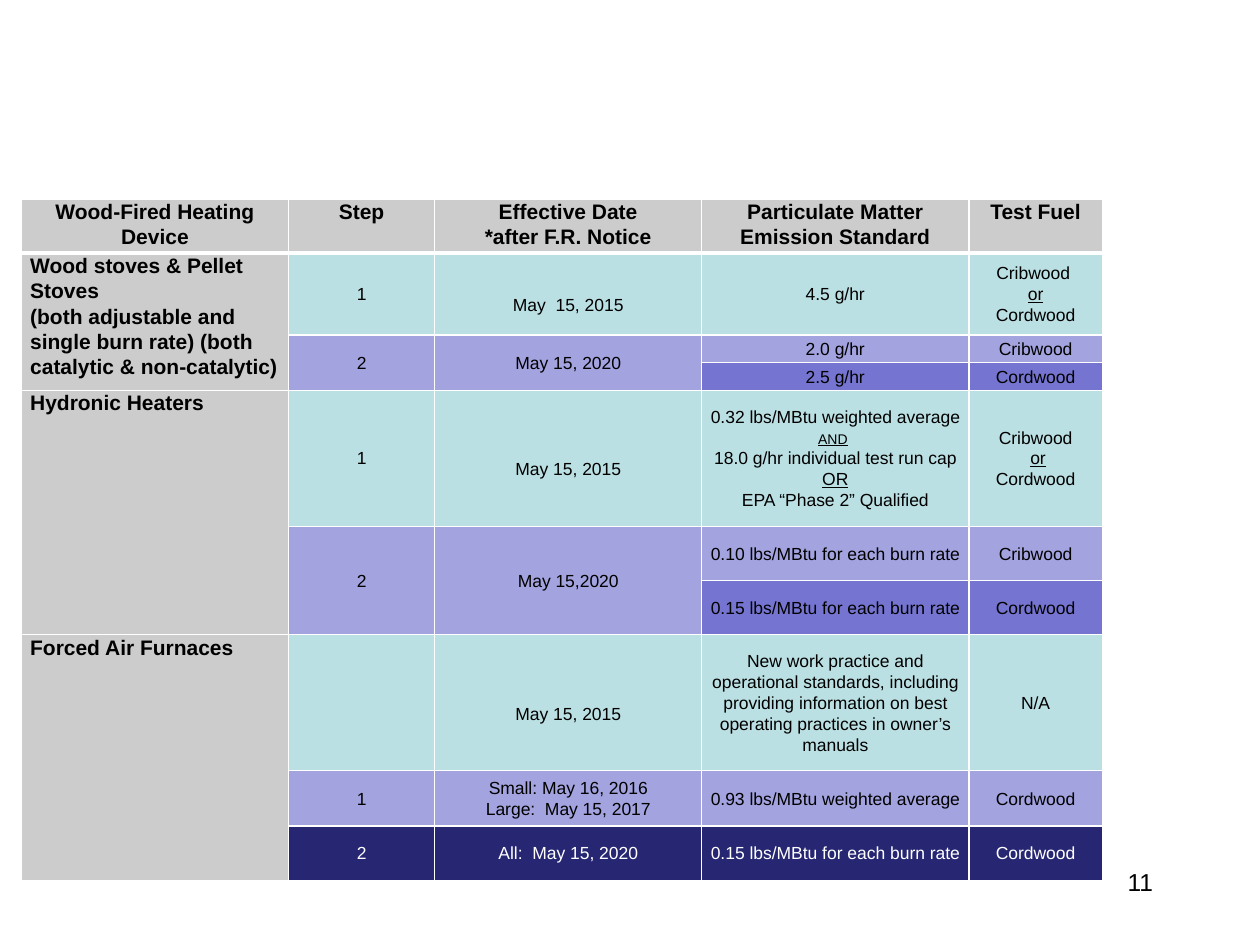
"""Build a slide with a table of wood heater emission standards."""
from lxml import etree
from pptx import Presentation
from pptx.dml.color import RGBColor
from pptx.enum import text
from pptx.oxml import ns
from pptx.util import Inches, Pt

BLACK = RGBColor(0, 0, 0)
WHITE = RGBColor(0xFF, 0xFF, 0xFF)
GRAY = RGBColor(0xCC, 0xCC, 0xCC)
TEAL = RGBColor(0xBB, 0xE0, 0xE3)
LILAC = RGBColor(0xA3, 0xA3, 0xE0)
VIOLET = RGBColor(0x75, 0x75, 0xD1)
NAVY = RGBColor(0x26, 0x26, 0x73)

COLUMN_WIDTHS = [2.12, 1.16, 2.12, 2.12, 1.06]
ROW_HEIGHTS = [0.4, 0.65, 0.22, 0.22, 1.08, 0.43, 0.43, 1.08, 0.44, 0.43]
STEP_FILLS = [TEAL, LILAC, VIOLET, TEAL, LILAC, VIOLET, TEAL, LILAC, NAVY]
DATE_COLUMN = 2
MERGES = [(1, 0, 3), (2, 1, 2), (2, 2, 2), (4, 0, 3),
          (5, 1, 2), (5, 2, 2), (7, 0, 3)]

UNDERLINED = {"underline": True}
OR_LINE = [("or", UNDERLINED)]
HEADINGS = [
    ["Wood-Fired Heating Device"],
    ["Step"],
    ["Effective Date", "*after F.R. Notice"],
    ["Particulate Matter Emission Standard"],
    ["Test Fuel"],
]
STANDARDS = [
    [["Wood stoves & Pellet Stoves",
      "(both adjustable and single burn rate) (both catalytic & non-catalytic)"],
     ["1"], ["May  15, 2015"], ["4.5 g/hr"],
     ["Cribwood ", OR_LINE, "Cordwood"]],
    [[], ["2"], ["May 15, 2020"], ["2.0 g/hr"], ["Cribwood"]],
    [[], [], [], ["2.5 g/hr"], ["Cordwood"]],
    [["Hydronic Heaters"], ["1"], ["May 15, 2015"],
     [[("0.32 lbs/MBtu weighted average ", {}),
       ("AND", {"underline": True, "size": 8}), (" ", {})],
      "18.0 g/hr individual test run cap",
      [("OR", UNDERLINED)],
      "EPA “Phase 2” Qualified"],
     ["Cribwood", [(" ", {})] + OR_LINE, "Cordwood"]],
    [[], ["2"], ["May 15,2020"], ["0.10 lbs/MBtu for each burn rate"],
     ["Cribwood"]],
    [[], [], [], ["0.15 lbs/MBtu for each burn rate"], ["Cordwood"]],
    [["Forced Air Furnaces"], [], ["May 15, 2015"],
     ["New work practice and operational standards, including providing "
      "information on best operating practices in owner’s manuals"], ["N/A"]],
    [[], ["1"], ["Small: May 16, 2016", "Large:  May 15, 2017"],
     ["0.93 lbs/MBtu weighted average"], ["Cordwood"]],
    [[], ["2"], ["All:  May 15, 2020"],
     ["0.15 lbs/MBtu for each burn rate"], ["Cordwood"]],
]


def write_text(frame, lines, size=10, bold=False, color=BLACK,
               align=text.PP_ALIGN.CENTER, spacing=1.07):
    """Fill a text frame with lines, each a string or a list of formatted runs."""
    for index, line in enumerate(lines):
        paragraph = frame.paragraphs[0] if index == 0 else frame.add_paragraph()
        paragraph.alignment = align
        paragraph.line_spacing = spacing
        for words, extra in [(line, {})] if isinstance(line, str) else line:
            run = paragraph.add_run()
            run.text = words
            run.font.name = "Arial"
            run.font.size = Pt(extra.get("size", size))
            run.font.bold = bold
            run.font.underline = extra.get("underline", False)
            run.font.color.rgb = color


def add_borders(cell, widths):
    """Draw white borders of the given widths around a cell."""
    properties = cell._tc.get_or_add_tcPr()
    for side, width in widths.items():
        line = etree.SubElement(properties, ns.qn(f"a:ln{side}"), w=str(Pt(width)))
        fill = etree.SubElement(line, ns.qn("a:solidFill"))
        etree.SubElement(fill, ns.qn("a:srgbClr"), val=str(WHITE))


def format_cell(cell, lines, fill, top_border=1, bottom_border=1,
                anchor=text.MSO_ANCHOR.MIDDLE, top_margin=0, **text_format):
    """Style one table cell and write its text."""
    add_borders(cell, {"L": 1, "R": 1, "T": top_border, "B": bottom_border})
    cell.fill.solid()
    cell.fill.fore_color.rgb = fill
    cell.vertical_anchor = anchor
    cell.margin_left = cell.margin_right = Inches(0.07)
    cell.margin_top, cell.margin_bottom = Inches(top_margin), 0
    write_text(cell.text_frame, lines, **text_format)


def add_standards_table(slide):
    """Add the table of steps, dates, standards and test fuels."""
    table = slide.shapes.add_table(
        len(ROW_HEIGHTS), len(COLUMN_WIDTHS), Inches(0.17), Inches(1.58),
        Inches(sum(COLUMN_WIDTHS)), Inches(sum(ROW_HEIGHTS))).table
    table.first_row = table.horz_banding = False
    for column, width in zip(table.columns, COLUMN_WIDTHS):
        column.width = Inches(width)
    for row, height in zip(table.rows, ROW_HEIGHTS):
        row.height = Inches(height)

    label = {"fill": GRAY, "size": 12, "bold": True,
             "anchor": text.MSO_ANCHOR.TOP}
    for column, heading in enumerate(HEADINGS):
        format_cell(table.cell(0, column), heading, bottom_border=3, **label)
    for row, (entries, fill) in enumerate(zip(STANDARDS, STEP_FILLS), start=1):
        top_border = 3 if row == 1 else 1
        format_cell(table.cell(row, 0), entries[0], top_border=top_border,
                    align=text.PP_ALIGN.LEFT, **label)
        for column, lines in enumerate(entries[1:], start=1):
            lowered = column == DATE_COLUMN and fill == TEAL
            format_cell(table.cell(row, column), lines, fill,
                        top_border=top_border,
                        top_margin=0.17 if lowered else 0,
                        color=WHITE if fill == NAVY else BLACK)
    for row, column, span in MERGES:
        table.cell(row, column).merge(table.cell(row + span - 1, column))


def add_page_number(slide, number):
    """Add the page number at the lower right."""
    box = slide.shapes.add_textbox(
        Inches(7.17), Inches(6.83), Inches(2.08), Inches(0.5))
    box.text_frame.word_wrap = True
    write_text(box.text_frame, [number], size=14,
               align=text.PP_ALIGN.RIGHT, spacing=1.0)


def main():
    """Create and save the presentation."""
    presentation = Presentation()
    presentation.slide_width = Inches(10)
    presentation.slide_height = Inches(7.5)
    slide = presentation.slides.add_slide(presentation.slide_layouts[6])
    add_page_number(slide, "11")
    add_standards_table(slide)
    presentation.save("out.pptx")


if __name__ == "__main__":
    main()
